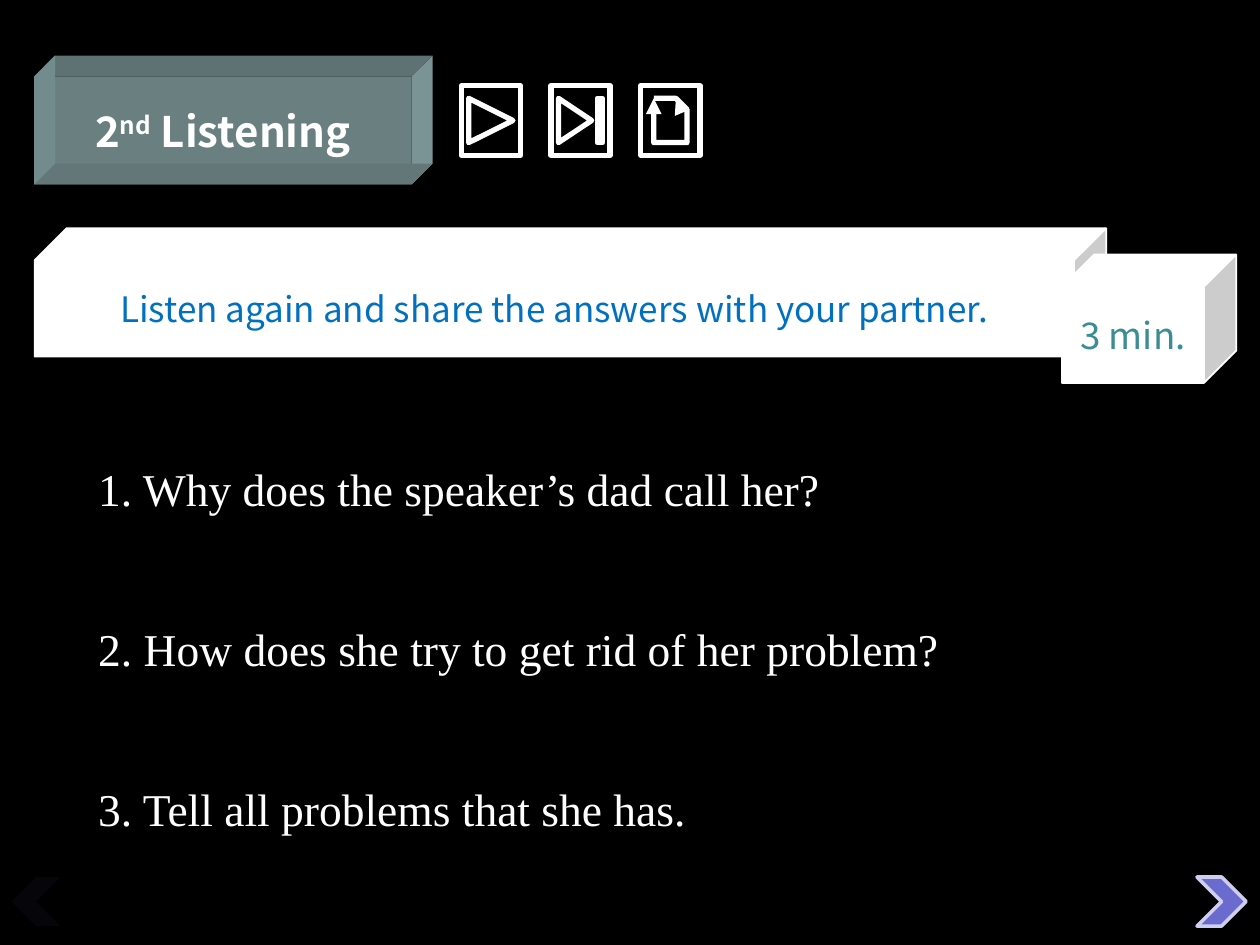
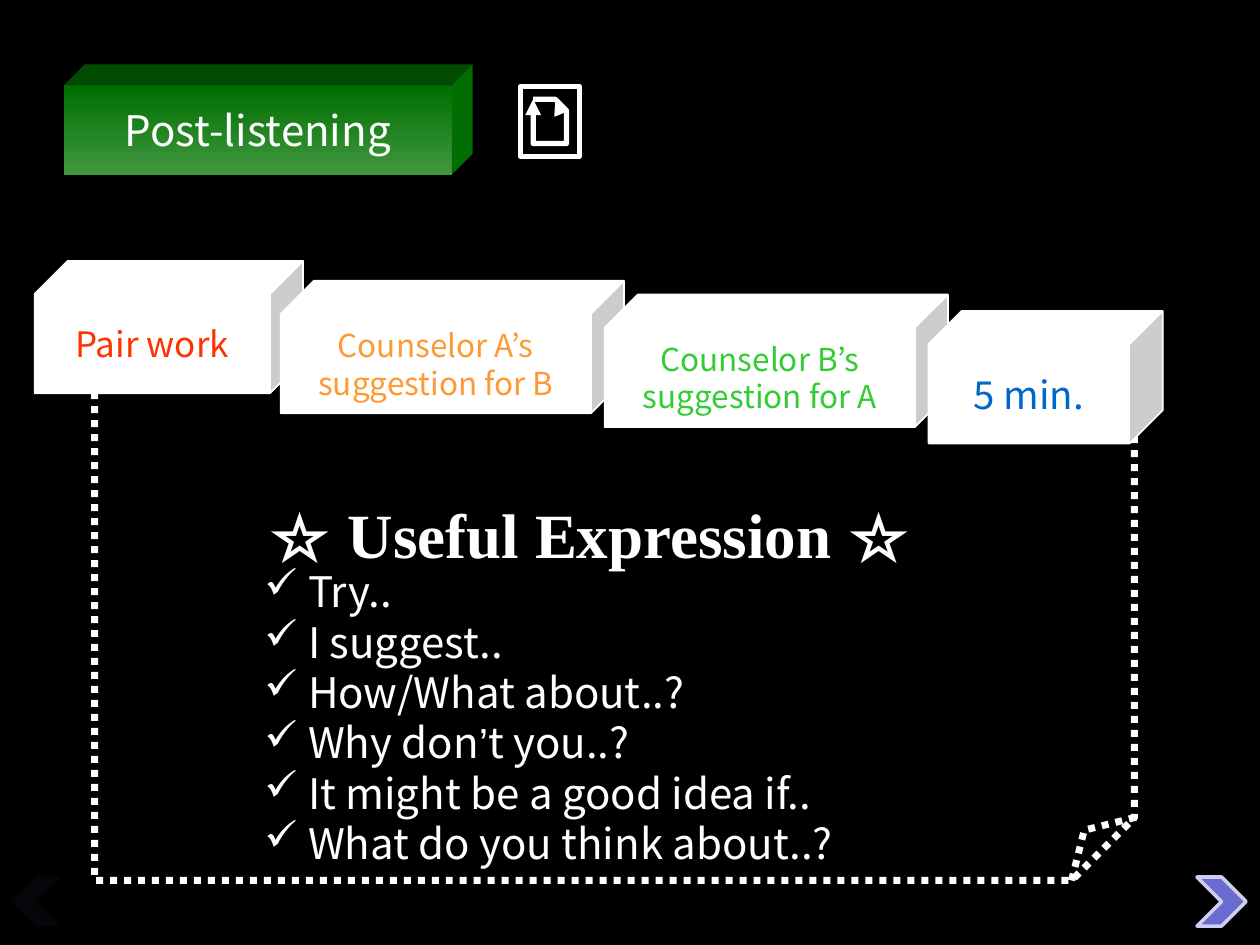
from lxml.etree import SubElement
from pptx import Presentation
from pptx.dml.color import RGBColor
from pptx.enum.dml import MSO_LINE
from pptx.enum.shapes import MSO_SHAPE
from pptx.enum.text import MSO_ANCHOR, PP_ALIGN
from pptx.oxml.ns import qn
from pptx.util import Cm, Pt

BLACK = RGBColor(0x00, 0x00, 0x00)
WHITE = RGBColor(0xFF, 0xFF, 0xFF)
BLUE = RGBColor(0x00, 0x70, 0xC0)
TEAL = RGBColor(0x3C, 0x8C, 0x93)
RED = RGBColor(0xFF, 0x33, 0x00)
ORANGE = RGBColor(0xFF, 0x99, 0x33)
LIME = RGBColor(0x33, 0xCC, 0x33)
ROYAL = RGBColor(0x00, 0x66, 0xCC)
VIOLET = RGBColor(0x6B, 0x6B, 0xCF)
LILAC = RGBColor(0xCE, 0xCE, 0xEF)
NIGHT = RGBColor(0x05, 0x05, 0x0A)
SLATE = RGBColor(0x6A, 0x7F, 0x80)
SLATE_TOP = RGBColor(0x5F, 0x72, 0x73)
SLATE_RIGHT = RGBColor(0x7A, 0x93, 0x94)
SLATE_BOTTOM = RGBColor(0x64, 0x77, 0x78)
SLATE_LEFT = RGBColor(0x72, 0x8B, 0x8C)
GREEN = RGBColor(0x00, 0x6E, 0x00)
GREEN_END = RGBColor(0x40, 0x98, 0x40)
GREEN_TOP = RGBColor(0x00, 0x4B, 0x00)
SANS, SERIF = "Noto Sans CJK KR", "Times New Roman"


class Deck:
    """Lesson deck style together with the slide being drawn."""

    def __init__(self):
        self.prs = Presentation()
        self.prs.slide_width, self.prs.slide_height = Cm(25.4), Cm(19.05)
        self.s = None

    def slide(self):
        """Start a black slide."""
        self.s = self.prs.slides.add_slide(self.prs.slide_layouts[6])
        fill = self.s.background.fill
        fill.solid()
        fill.fore_color.rgb = BLACK

    def paint(self, sp, fill=None, line=None, width=1):
        """Set fill and outline without shadow."""
        sp.shadow.inherit = False
        if fill is None:
            sp.fill.background()
        else:
            sp.fill.solid()
            sp.fill.fore_color.rgb = fill
        if line is None:
            sp.line.fill.background()
        else:
            sp.line.color.rgb = line
            sp.line.width = Pt(width)
        return sp

    def shape(self, kind, x, y, w, h, fill=None, line=None, width=1):
        """Add a preset shape."""
        sp = self.s.shapes.add_shape(kind, Cm(x), Cm(y), Cm(w), Cm(h))
        return self.paint(sp, fill, line, width)

    def run(self, p, text, size, color=WHITE, font=SANS, bold=False):
        """Append one formatted run."""
        r = p.add_run()
        r.text = text
        r.font.size, r.font.name, r.font.bold = Pt(size), font, bold
        r.font.color.rgb = color
        return r

    def textbox(self, x, y, w, h, wrap=True):
        """Add an empty text box and give its frame."""
        tf = self.s.shapes.add_textbox(Cm(x), Cm(y), Cm(w), Cm(h)).text_frame
        tf.word_wrap = wrap
        return tf

    def paragraphs(self, tf, count):
        """Yield the first paragraph and then new ones."""
        for i in range(count):
            yield tf.add_paragraph() if i else tf.paragraphs[0]

    def plate(self, x, y, w, h, front, faces, depth=0.42):
        """Add a title block extruded to the upper right; give it and its paragraph."""
        sp = self.shape(MSO_SHAPE.RECTANGLE, x, y, w, h, front)
        near = [(x, y), (x + w, y), (x + w, y + h), (x, y + h)]
        far = [(px + depth, py - depth) for px, py in near]
        for i, color in enumerate(faces):
            j = (i + 1) % 4
            pts = [(Cm(px), Cm(py)) for px, py in (near[i], near[j], far[j], far[i])]
            fb = self.s.shapes.build_freeform(*pts[0])
            fb.add_line_segments(pts[1:])
            self.paint(fb.convert_to_shape(), color)
        tf = sp.text_frame
        tf.word_wrap, tf.vertical_anchor = False, MSO_ANCHOR.MIDDLE
        p = tf.paragraphs[0]
        p.alignment = PP_ALIGN.CENTER
        return sp, p

    def cube(self, x, y, w, h, lines, size, color):
        """Add a white cube with centred lines."""
        sp = self.shape(MSO_SHAPE.CUBE, x, y, w, h, WHITE, WHITE)
        tf = sp.text_frame
        tf.word_wrap, tf.vertical_anchor = True, MSO_ANCHOR.MIDDLE
        for p, line in zip(self.paragraphs(tf, len(lines)), lines):
            p.alignment = PP_ALIGN.CENTER
            self.run(p, line, size, color)

    def button(self, kind, x, y):
        """Add a media button whose open strokes end in arrowheads."""
        sp = self.shape(kind, x, y, 1.19, 1.4, BLACK, WHITE, 3)
        ln = sp._element.spPr.find(qn("a:ln"))
        SubElement(ln, qn("a:round"))
        SubElement(ln, qn("a:tailEnd"), type="triangle")

    def folded_note(self, x, y, w, h):
        """Add a dotted note with a small folded corner."""
        sp = self.shape(MSO_SHAPE.FOLDED_CORNER, x, y, w, h, line=WHITE, width=4)
        sp.line.dash_style = MSO_LINE.ROUND_DOT
        geom = sp._element.spPr.find(qn("a:prstGeom"))
        SubElement(geom.find(qn("a:avLst")), qn("a:gd"), name="adj", fmla="val 12500")

    def navigation(self):
        """Add the dimmed back chevron and the bright forward one."""
        sp = self.shape(MSO_SHAPE.CHEVRON, 0.23, 17.68, 0.99, 0.99, NIGHT)
        sp.rotation = 180
        self.shape(MSO_SHAPE.CHEVRON, 24.13, 17.68, 0.99, 0.99, VIOLET, LILAC, 2)

    def questions(self, x, y, w, h, items):
        """Add widely spaced questions."""
        tf = self.textbox(x, y, w, h)
        tf.vertical_anchor = MSO_ANCHOR.MIDDLE
        for i, p in enumerate(self.paragraphs(tf, len(items))):
            p.line_spacing = 0.8
            p.space_before = Pt(66.4 if i else 0)
            self.run(p, items[i], 26, font=SERIF)

    def checklist(self, x, y, w, h, items):
        """Add a list with check marks; each item is a list of text and font pairs."""
        tf = self.textbox(x, y, w, h)
        for p, item in zip(self.paragraphs(tf, len(items)), items):
            pPr = p._p.get_or_add_pPr()
            pPr.set("marL", str(Cm(0.88)))
            pPr.set("indent", str(-Cm(0.88)))
            SubElement(pPr, qn("a:buChar"), char="✓")
            for text, font in item:
                self.run(p, text, 24, font=font)


def listening(d):
    """Build the second listening slide."""
    d.slide()
    d.questions(1.73, 7.57, 23.37, 11.2, [
        "1. Why does the speaker’s dad call her?",
        "2. How does she try to get rid of her problem?",
        "3. Tell all problems that she has."])
    _, p = d.plate(0.69, 1.54, 7.61, 2.18, SLATE,
                   [SLATE_TOP, SLATE_RIGHT, SLATE_BOTTOM, SLATE_LEFT])
    d.run(p, "2", 24, bold=True)
    r = d.run(p, "nd", 24, bold=True)
    r._r.get_or_add_rPr().set("baseline", "30000")
    d.run(p, " Listening", 24, bold=True)
    d.navigation()
    d.cube(0.7, 4.6, 21.6, 2.59, ["Listen again and share the answers with your partner."], 20, BLUE)
    d.cube(21.41, 5.13, 3.51, 2.59, ["3 min."], 21, TEAL)
    kinds = (MSO_SHAPE.ACTION_BUTTON_FORWARD_OR_NEXT, MSO_SHAPE.ACTION_BUTTON_END,
             MSO_SHAPE.ACTION_BUTTON_DOCUMENT)
    for i, kind in enumerate(kinds):
        d.button(kind, 9.3 + 1.81 * i, 1.73)


def post_listening(d):
    """Build the post-listening slide."""
    d.slide()
    sp, p = d.plate(1.29, 1.72, 7.82, 1.8, GREEN, [GREEN_TOP, GREEN])
    sp.fill.gradient()
    sp.fill.gradient_angle = 270
    for stop, color in zip(sp.fill.gradient_stops, (GREEN, GREEN_END)):
        stop.color.rgb = color
    d.run(p, "Post-listening", 24)
    d.folded_note(1.91, 7.62, 20.96, 10.13)
    for x, y, w, lines, size, color in (
            (0.7, 5.26, 5.41, ["Pair work"], 20, RED),
            (5.66, 5.66, 6.92, ["Counselor A’s", "suggestion for B"], 18, ORANGE),
            (12.19, 5.94, 6.92, ["Counselor B’s", "suggestion for A"], 18, LIME),
            (18.72, 6.27, 4.72, ["5 min."], 22, ROYAL)):
        d.cube(x, y, w, 2.67, lines, size, color)
    d.checklist(5.08, 11.28, 14.4, 6.35, [
        [("Try..", SANS)],
        [("I suggest..", SANS)],
        [("How/What about..?", SANS)],
        [("Why don", SANS), ("’", "Arial"), ("t you..?", SANS)],
        [("It might be a good idea if..", SANS)],
        [("What do you think about..?", SANS)]])
    p = d.textbox(3.89, 9.86, 16, 1.27, wrap=False).paragraphs[0]
    p.alignment = PP_ALIGN.CENTER
    d.run(p, "☆ Useful Expression ☆", 36, font=SERIF, bold=True)
    d.navigation()
    d.button(MSO_SHAPE.ACTION_BUTTON_DOCUMENT, 10.49, 1.75)


def main():
    """Build and save the deck."""
    d = Deck()
    listening(d)
    post_listening(d)
    d.prs.save("out.pptx")


if __name__ == "__main__":
    main()
